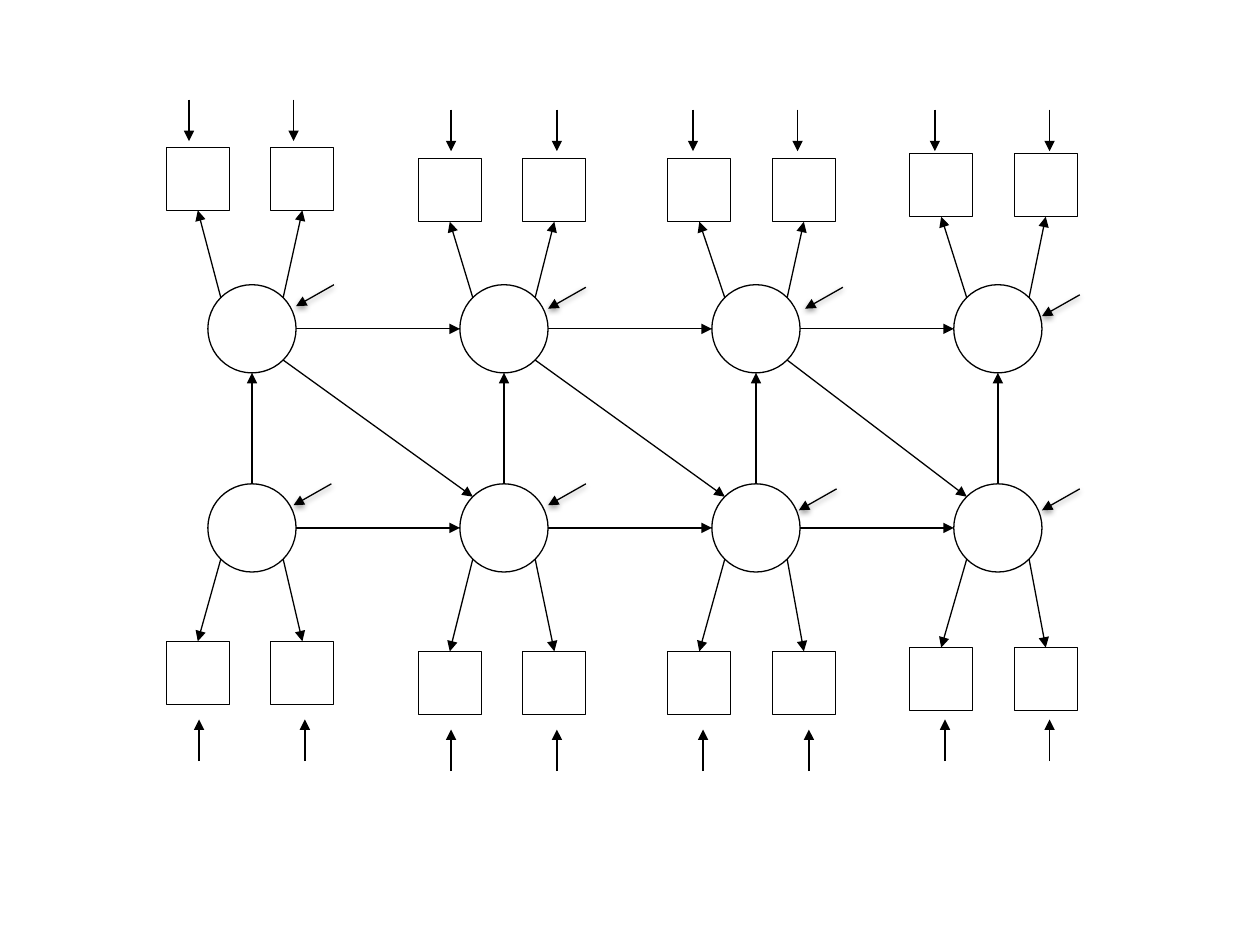
import collections
import math

import pptx
import pptx.dml.color
import pptx.enum.shapes
import pptx.oxml
import pptx.oxml.ns
import pptx.util

Inches = pptx.util.Inches
SHAPES = pptx.enum.shapes.MSO_SHAPE
INK = "000000"
RADIUS = 0.35
DIAGONAL = RADIUS * math.sqrt(0.5)
SIDE = 0.5
PAIR_STEP = 0.83
ARROW_LENGTH = 0.33
UPPER_Y, LOWER_Y = 2.61, 4.19

Wave = collections.namedtuple(
    "Wave", "x box_x top_y bottom_y top_arrows top_arrow_y bottom_arrows bottom_arrow_y disturbances"
)
WAVES = [
    Wave(2, 1.32, 1.17, 5.09, (1.5, 2.33), 0.79, (1.58, 2.42), 5.71, ((2.65, 2.26), (2.63, 3.84))),
    Wave(4, 3.32, 1.26, 5.17, (3.58, 4.42), 0.87, (3.58, 4.42), 5.79, ((4.65, 2.28), (4.65, 3.84))),
    Wave(6, 5.3, 1.26, 5.17, (5.5, 6.33), 0.87, (5.58, 6.42), 5.79, ((6.69, 2.28), (6.64, 3.88))),
    Wave(7.92, 7.22, 1.22, 5.14, (7.42, 8.33), 0.87, (7.5, 8.33), 5.71, ((8.57, 2.34), (8.57, 3.88))),
]


def color(value):
    return pptx.dml.color.RGBColor.from_string(value)


class Diagram:
    """Draws outlined nodes and arrows in one style on the current slide."""

    def __init__(self, slide, ink=INK, weight=0.75):
        self.s = slide
        self.ink = ink
        self.weight = pptx.util.Pt(weight)

    def outline(self, sp):
        sp.line.color.rgb = color(self.ink)
        sp.line.width = self.weight

    def node(self, kind, x, y, size):
        sp = self.s.shapes.add_shape(kind, Inches(x), Inches(y), Inches(size), Inches(size))
        sp.shadow.inherit = False
        sp.fill.background()
        self.outline(sp)
        return sp

    def circle(self, x, y):
        return self.node(SHAPES.OVAL, x - RADIUS, y - RADIUS, 2 * RADIUS)

    def square(self, x, y):
        return self.node(SHAPES.RECTANGLE, x, y, SIDE)

    def arrow(self, x1, y1, x2, y2, shadow=False):
        cxn = self.s.shapes.add_connector(
            pptx.enum.shapes.MSO_CONNECTOR.STRAIGHT, Inches(x1), Inches(y1), Inches(x2), Inches(y2)
        )
        self.outline(cxn)
        ns = pptx.oxml.ns.nsdecls("a")
        cxn.line._get_or_add_ln().append(pptx.oxml.parse_xml(f'<a:tailEnd {ns} type="triangle"/>'))
        effect = ""
        if shadow:
            effect = (
                f'<a:outerShdw blurRad="{pptx.util.Pt(3.1)}" dist="{pptx.util.Pt(1.6)}" dir="5400000" '
                f'rotWithShape="0"><a:srgbClr val="{self.ink}"><a:alpha val="38000"/></a:srgbClr></a:outerShdw>'
            )
        cxn._element.spPr.append(pptx.oxml.parse_xml(f"<a:effectLst {ns}>{effect}</a:effectLst>"))
        return cxn

    def indicators(self, wave, box_y, circle_y, side):
        direction = -1 if side == 2 else 1
        for i, sign in enumerate((-1, 1)):
            x = wave.box_x + i * PAIR_STEP
            sp = self.square(x, box_y)
            cxn = self.arrow(
                wave.x + sign * DIAGONAL, circle_y + direction * DIAGONAL, x + SIDE / 2, box_y
            )
            cxn.end_connect(sp, side)

    def wave(self, wave):
        for y in (UPPER_Y, LOWER_Y):
            self.circle(wave.x, y)
        self.arrow(wave.x, LOWER_Y - RADIUS, wave.x, UPPER_Y + RADIUS)
        self.indicators(wave, wave.top_y, UPPER_Y, 2)
        self.indicators(wave, wave.bottom_y, LOWER_Y, 0)
        for x in wave.top_arrows:
            self.arrow(x, wave.top_arrow_y, x, wave.top_arrow_y + ARROW_LENGTH)
        for x in wave.bottom_arrows:
            self.arrow(x, wave.bottom_arrow_y + ARROW_LENGTH, x, wave.bottom_arrow_y)
        for x, y in wave.disturbances:
            self.arrow(x, y, x - 0.3, y + 0.17, shadow=True)

    def transition(self, x1, x2):
        for y in (UPPER_Y, LOWER_Y):
            self.arrow(x1 + RADIUS, y, x2 - RADIUS, y)
        self.arrow(x1 + DIAGONAL, UPPER_Y + DIAGONAL, x2 - DIAGONAL, LOWER_Y - DIAGONAL)


def main():
    prs = pptx.Presentation()
    prs.slide_width, prs.slide_height = Inches(10), Inches(7.5)
    diagram = Diagram(prs.slides.add_slide(prs.slide_layouts[6]))
    for wave in WAVES:
        diagram.wave(wave)
    for before, after in zip(WAVES, WAVES[1:]):
        diagram.transition(before.x, after.x)
    prs.save("out.pptx")


if __name__ == "__main__":
    main()
